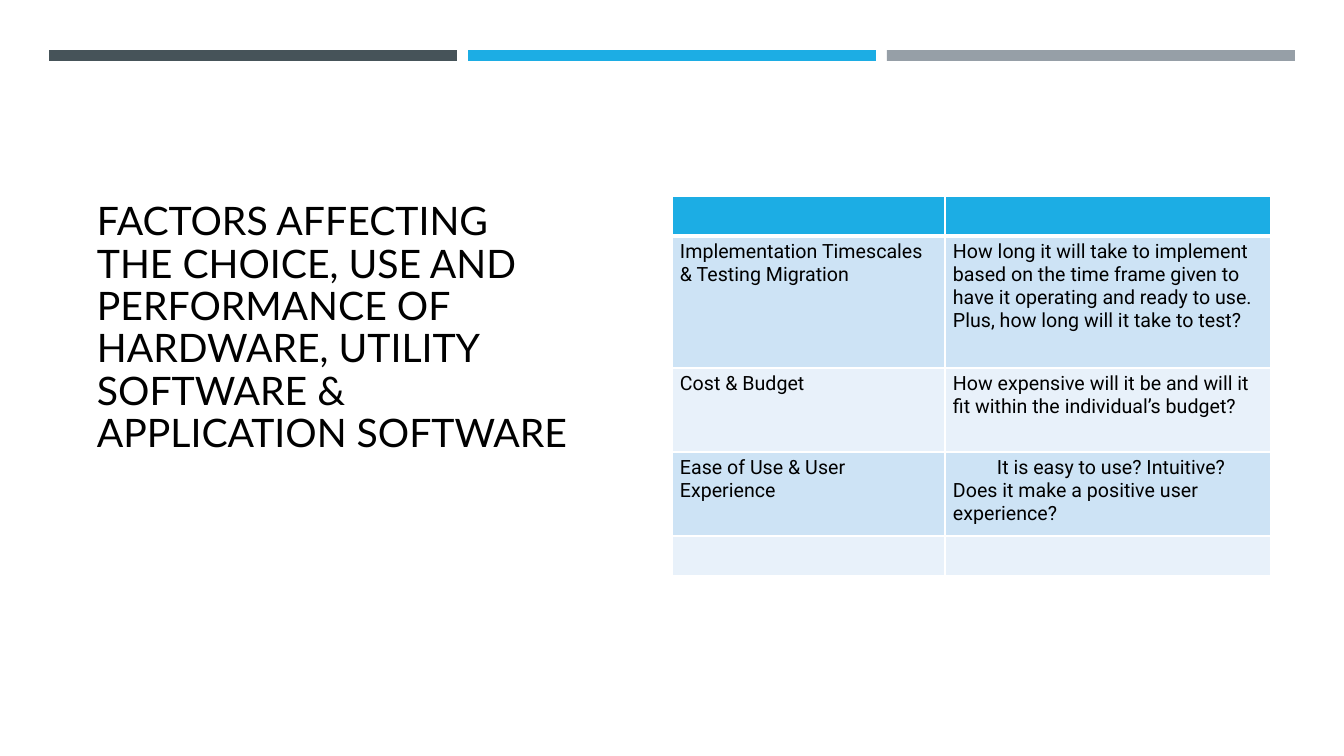
from lxml import etree
from pptx import Presentation
from pptx import util as u
from pptx.dml.color import RGBColor
from pptx.enum import shapes, text
from pptx.oxml import ns

INK = {
    "text": "000000", "line": "FFFFFF", "dark": "465359", "blue": "1CADE4",
    "gray": "969FA7", "band": "CDE3F5", "pale": "E8F1FA",
}
ROWS = [
    ("", ""),
    ("Implementation Timescales & Testing Migration",
     "How long it will take to implement based on the time frame given to "
     "have it operating and ready to use. Plus, how long will it take to test?"),
    ("Cost & Budget",
     "How expensive will it be and will it fit within the individual’s budget?"),
    ("Ease of Use & User Experience",
     "It is easy to use? Intuitive? Does it make a positive user experience?"),
    ("", ""),
]
WIDTHS = [273, 326]
HEIGHTS = [40, 132, 84, 84, 40]


def px(n):
    return u.Emu(round(n * 914400 / 100.8))


def tint(name):
    return RGBColor.from_string(INK[name])


class Deck:
    def __init__(self):
        self.prs = Presentation()
        self.prs.slide_width, self.prs.slide_height = px(1344), px(756)
        self.slide = self.prs.slides.add_slide(self.prs.slide_layouts[5])

    def run(self, para, words, font, size):
        run = para.add_run()
        run.text = words
        run.font.name, run.font.size = font, u.Pt(size)
        run.font.bold = False
        run.font.color.rgb = tint("text")

    def bar(self, x, y, w, h, color):
        bar = self.slide.shapes.add_shape(
            shapes.MSO_SHAPE.RECTANGLE, *map(px, (x, y, w, h)))
        bar.shadow.inherit = False
        bar.fill.solid()
        bar.fill.fore_color.rgb = tint(color)
        bar.line.fill.background()

    def title(self, x, y, w, h, words):
        title = self.slide.shapes.title
        title.left, title.top, title.width, title.height = map(px, (x, y, w, h))
        frame = title.text_frame
        frame.word_wrap = True
        frame.auto_size = text.MSO_AUTO_SIZE.NONE
        frame.vertical_anchor = text.MSO_ANCHOR.BOTTOM
        frame.margin_left = frame.margin_right = px(10)
        frame.margin_bottom = px(47)
        para = frame.paragraphs[0]
        para.alignment = text.PP_ALIGN.LEFT
        para.line_spacing = 0.9
        self.run(para, words, "Lato", 28)

    def edge(self, cell, side, width):
        props = cell._tc.get_or_add_tcPr()
        line = etree.SubElement(props, ns.qn("a:ln" + side), w=str(u.Pt(width)))
        fill = etree.SubElement(line, ns.qn("a:solidFill"))
        etree.SubElement(fill, ns.qn("a:srgbClr"), val=INK["line"])

    def cell(self, cell, words, row):
        cell.margin_left = cell.margin_right = px(8)
        cell.margin_top = cell.margin_bottom = px(4)
        for side in "LRTB":
            thick = (row, side) in ((0, "B"), (1, "T"))
            self.edge(cell, side, 3 if thick else 1)
        cell.fill.solid()
        color = "blue" if row == 0 else "band" if row % 2 else "pale"
        cell.fill.fore_color.rgb = tint(color)
        if words:
            self.run(cell.text_frame.paragraphs[0], words, "Roboto", 14)

    def table(self, x, y, widths, heights, rows):
        size = sum(widths), sum(heights)
        table = self.slide.shapes.add_table(
            len(rows), len(widths), *map(px, (x, y, *size))).table
        for col, width in zip(table.columns, widths):
            col.width = px(width)
        for r, (height, row) in enumerate(zip(heights, rows)):
            table.rows[r].height = px(height)
            for c, words in enumerate(row):
                self.cell(table.cell(r, c), words, r)
        return table


def main():
    deck = Deck()
    for i, color in enumerate(("dark", "blue", "gray")):
        deck.bar(49 + 419 * i, 50, 408, 11, color)
    deck.title(87, 133, 494, 370,
               "FACTORS AFFECTING THE CHOICE, USE AND PERFORMANCE OF HARDWARE, "
               "UTILITY SOFTWARE & APPLICATION SOFTWARE")
    table = deck.table(672, 196, WIDTHS, HEIGHTS, ROWS)
    ease = table.cell(3, 1).text_frame.paragraphs[0]
    ease._p.get_or_add_pPr().set("indent", str(px(44)))
    deck.prs.save("out.pptx")


if __name__ == "__main__":
    main()
